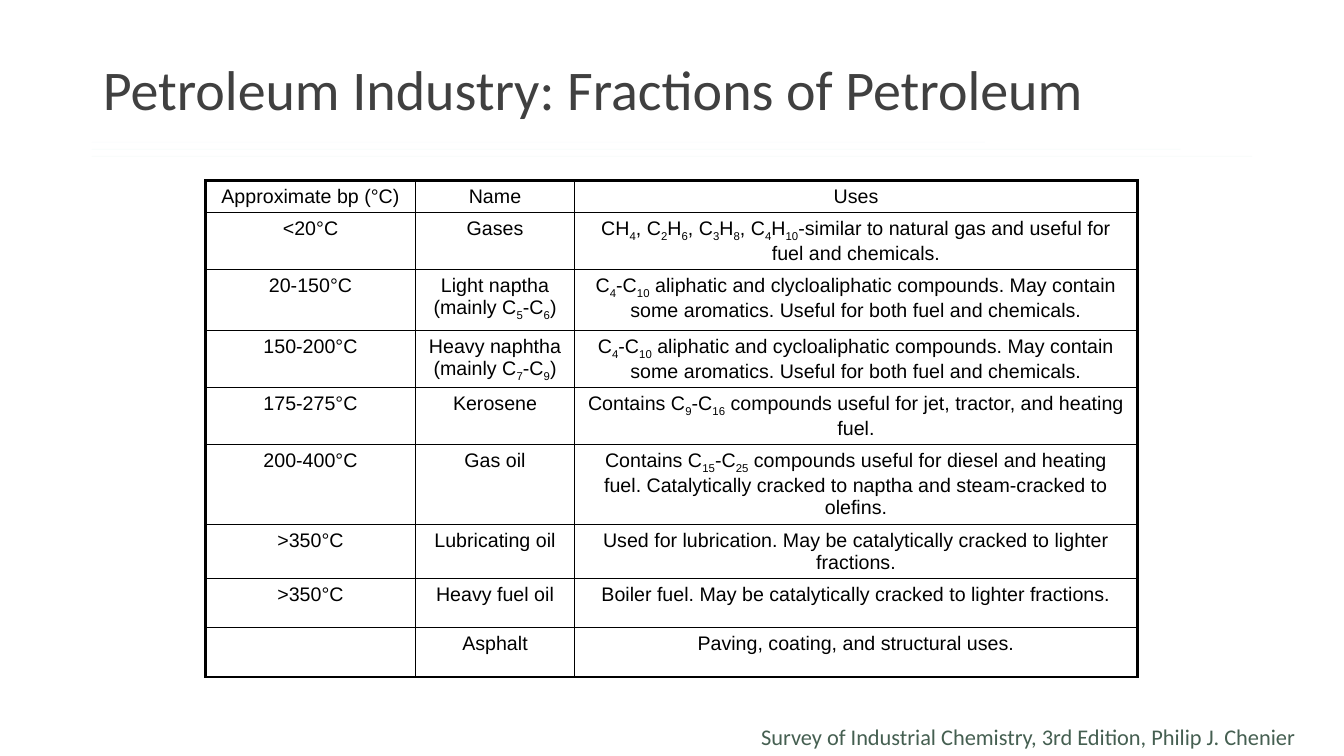
from pptx import Presentation
from pptx.dml.color import RGBColor
from pptx.enum import shapes, text
from pptx.oxml import parse_xml
from pptx.oxml.ns import nsdecls
from pptx.util import Inches, Pt

# Theme: size, font and colour of each kind of text
THEME = {
    "title": (40, "Calibri", "404040"),
    "cell": (14, "Arial", "000000"),
    "source": (16, "Calibri", "455F51"),
    "border": "000000",
    "rules": ("4EB3CF", "44C1A3", "37A76F"),
}


def write(para, words, kind, **form):
    """Fill a paragraph; digits in braces become subscripts."""
    for name, value in form.items():
        setattr(para, name, value)
    size, face, color = THEME[kind]
    for i, part in enumerate(words.replace("}", "{").split("{")):
        if not part:
            continue
        run = para.add_run()
        run.text = part
        run.font.size, run.font.name = Pt(size), face
        run.font.color.rgb = RGBColor.from_string(color)
        if i % 2:
            run._r.get_or_add_rPr().set("baseline", "-25000")


def edge(cell, side, width):
    """Draw one border of a cell."""
    cell._tc.get_or_add_tcPr().append(parse_xml(
        f'<a:ln{side} {nsdecls("a")} w="{Pt(width)}"><a:solidFill>'
        f'<a:srgbClr val="{THEME["border"]}"/></a:solidFill></a:ln{side}>'))


deck = Presentation()
deck.slide_width, deck.slide_height = Inches(13.33), Inches(7.5)
slide = deck.slides.add_slide(deck.slide_layouts[5])

# Title
title = slide.shapes.title
title.left, title.top = Inches(0.92), Inches(0.19)
title.width, title.height = Inches(11.5), Inches(1.45)
title.text_frame.vertical_anchor = text.MSO_ANCHOR.MIDDLE
write(title.text_frame.paragraphs[0], "Petroleum Industry: Fractions of Petroleum",
      "title", alignment=text.PP_ALIGN.LEFT, line_spacing=0.9)

# Faint rules under the title
for i, (color, end) in enumerate(zip(THEME["rules"], (9.77, 11.71, 12.42))):
    y = Inches(1.41 + 0.07 * i)
    rule = slide.shapes.add_connector(
        shapes.MSO_CONNECTOR.STRAIGHT, Inches(0.91), y, Inches(end), y)
    rule.line.width = Pt(0.5)
    rule.line.color.rgb = RGBColor.from_string(color)
    tint = rule.line._ln.find(".//{*}srgbClr")
    tint.append(parse_xml(f'<a:alpha {nsdecls("a")} val="3000"/>'))
    rule._element.spPr.append(parse_xml(f'<a:effectLst {nsdecls("a")}/>'))

# Table of fractions
ROWS = [
    ("Approximate bp (°C)", "Name", "Uses"),
    ("<20°C", "Gases",
     "CH{4}, C{2}H{6}, C{3}H{8}, C{4}H{10}-similar to natural gas and useful "
     "for fuel and chemicals."),
    ("20-150°C", "Light naptha (mainly C{5}-C{6})",
     "C{4}-C{10} aliphatic and clycloaliphatic compounds. May contain some "
     "aromatics. Useful for both fuel and chemicals."),
    ("150-200°C", "Heavy naphtha (mainly C{7}-C{9})",
     "C{4}-C{10} aliphatic and cycloaliphatic compounds. May contain some "
     "aromatics. Useful for both fuel and chemicals."),
    ("175-275°C", "Kerosene",
     "Contains C{9}-C{16} compounds useful for jet, tractor, and heating fuel."),
    ("200-400°C", "Gas oil",
     "Contains C{15}-C{25} compounds useful for diesel and heating fuel. "
     "Catalytically cracked to naptha and steam-cracked to olefins."),
    (">350°C", "Lubricating oil",
     "Used for lubrication. May be catalytically cracked to lighter fractions."),
    (">350°C", "Heavy fuel oil",
     "Boiler fuel. May be catalytically cracked to lighter fractions."),
    ("", "Asphalt", "Paving, coating, and structural uses."),
]
WIDTHS = (2.08, 1.58, 5.58)
HEIGHTS = {0: 0.31, 2: 0.6}
table = slide.shapes.add_table(
    len(ROWS), len(WIDTHS), Inches(2.04), Inches(1.79),
    Inches(9.25), Inches(4.33)).table
table.first_row = table.horz_banding = False
for col, width in zip(table.columns, WIDTHS):
    col.width = Inches(width)
last, right = len(ROWS) - 1, len(WIDTHS) - 1
for r, row in enumerate(ROWS):
    table.rows[r].height = Inches(HEIGHTS.get(r, 0.49))
    for c, words in enumerate(row):
        cell = table.cell(r, c)
        outer = {"L": c == 0, "R": c == right, "T": r == 0, "B": r == last}
        for side, thick in outer.items():
            edge(cell, side, 2.25 if thick else 1)
        cell.fill.background()
        write(cell.text_frame.paragraphs[0], words, "cell",
              alignment=text.PP_ALIGN.CENTER)

# Source of the table
frame = slide.shapes.add_textbox(
    Inches(7.45), Inches(7.12), Inches(6.09), Inches(0.37)).text_frame
frame.word_wrap = True
write(frame.paragraphs[0],
      "Survey of Industrial Chemistry, 3rd Edition, Philip J. Chenier", "source")

deck.save("out.pptx")
